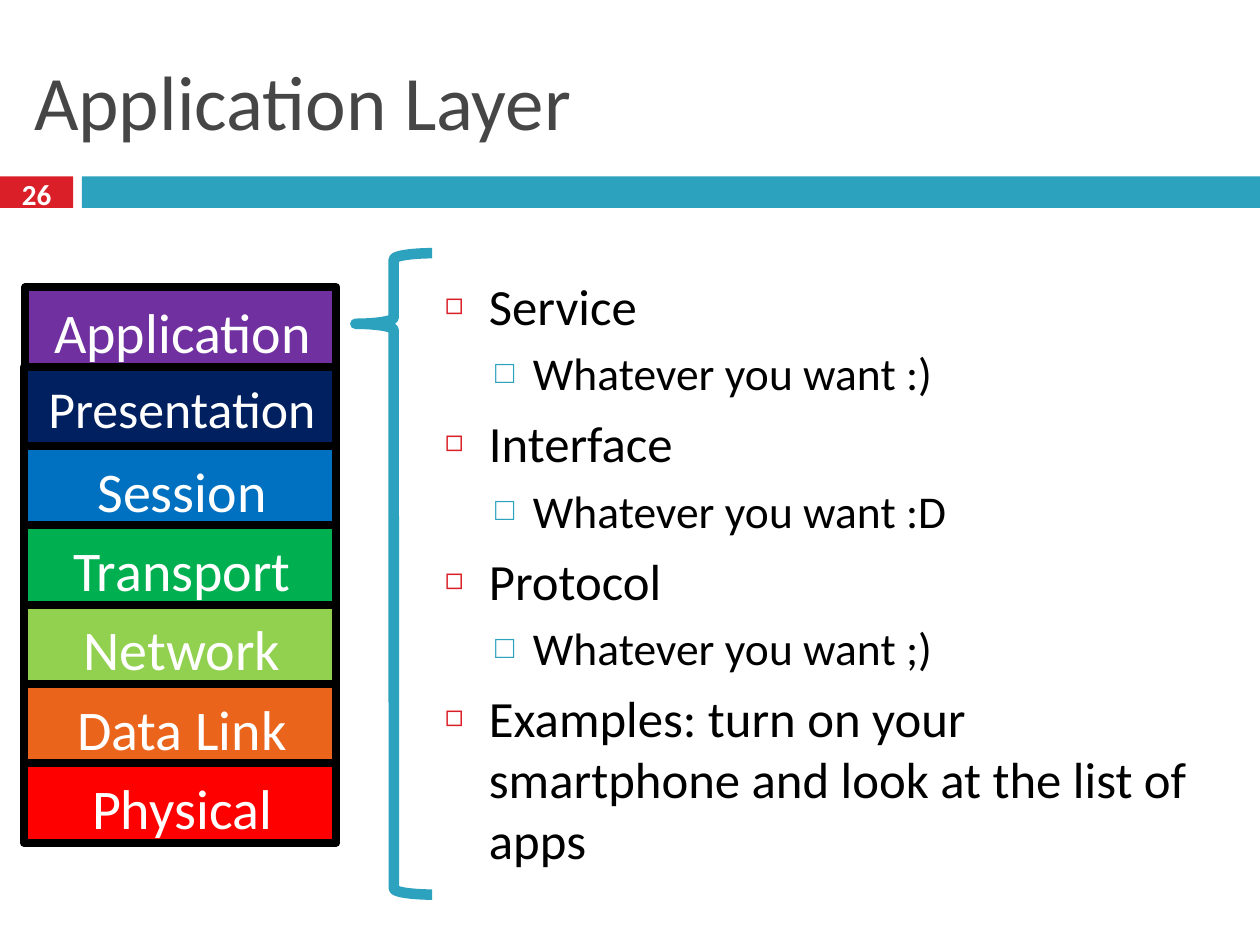
"""Build the Application Layer slide with its protocol stack and notes."""
from lxml.etree import SubElement
from pptx import Presentation
from pptx.dml.color import RGBColor
from pptx.enum.shapes import MSO_SHAPE as Shape
from pptx.enum.text import MSO_ANCHOR as Anchor, MSO_AUTO_SIZE as AutoSize, PP_ALIGN as Align
from pptx.oxml.ns import qn
from pptx.util import Inches, Pt

TITLE = "Application Layer"
PAGE = "26"
NOTES = [
    (0, "Service"),
    (1, "Whatever you want :)"),
    (0, "Interface"),
    (1, "Whatever you want :D"),
    (0, "Protocol"),
    (1, "Whatever you want ;)"),
    (0, "Examples: turn on your smartphone and look at the list of apps"),
]
LAYERS = [
    ("Application", "7030A0"),
    ("Presentation", "002060"),
    ("Session", "0070C0"),
    ("Transport", "00B050"),
    ("Network", "92D050"),
    ("Data Link", "EB641B"),
    ("Physical", "FF0000"),
]
THEME = dict(font="Calibri", title="464646", text="000000", light="FFFFFF",
             red="DA1F28", teal="2DA2BF", title_size=44, page_size=16.6,
             layer_size=32, long_layer_size=29.6)
LEVELS = [
    dict(size=29, before=7, left=0.35, hang=0.35, mark="◻", color=THEME["red"], pct=60),
    dict(size=26, before=5.5, left=0.7, hang=0.3, mark="□", color=THEME["teal"], pct=70),
]
STACK_TOP, LAYER_H = 2.28, 0.63


def rgb(value):
    return RGBColor.from_string(value)


def place(sp, box):
    sp.left, sp.top, sp.width, sp.height = map(Inches, box)


def write(p, text, size, color=THEME["text"], bold=False, align=Align.LEFT):
    p.alignment = align
    r = p.add_run()
    r.text = text
    r.font.name, r.font.size, r.font.bold = THEME["font"], Pt(size), bold
    r.font.color.rgb = rgb(color)


def add_shape(s, kind, box, fill=None, line=None, width=0):
    sp = s.shapes.add_shape(kind, *map(Inches, box))
    sp.shadow.inherit = False
    if fill:
        sp.fill.solid()
        sp.fill.fore_color.rgb = rgb(fill)
    else:
        sp.fill.background()
    if line:
        sp.line.color.rgb = rgb(line)
        sp.line.width = Pt(width)
    else:
        sp.line.fill.background()
    return sp


def add_label(s, box, text, size, anchor=Anchor.TOP, margins=(0.1, 0.08), **fmt):
    tf = s.shapes.add_textbox(*map(Inches, box)).text_frame
    tf.word_wrap = True
    tf.vertical_anchor = anchor
    tf.margin_left = tf.margin_right = Inches(margins[0])
    tf.margin_top = tf.margin_bottom = Inches(margins[1])
    write(tf.paragraphs[0], text, size, THEME["light"], align=Align.CENTER, **fmt)
    return tf.paragraphs[0]


def set_bullet(p, level):
    p.space_before = Pt(level["before"])
    pPr = p._p.get_or_add_pPr()
    pPr.set("marL", str(Inches(level["left"])))
    pPr.set("indent", str(-Inches(level["hang"])))
    SubElement(SubElement(pPr, qn("a:buClr")), qn("a:srgbClr"), val=level["color"])
    SubElement(pPr, qn("a:buSzPct"), val=str(level["pct"] * 1000))
    SubElement(pPr, qn("a:buChar"), char=level["mark"])


def add_title(s):
    place(s.shapes.title, (0.17, 0.25, 9.67, 1.08))
    tf = s.shapes.title.text_frame
    tf.vertical_anchor = Anchor.MIDDLE
    write(tf.paragraphs[0], TITLE, THEME["title_size"], THEME["title"])


def add_notes(s):
    body = s.placeholders[1]
    place(body, (3.43, 1.75, 6.4, 5.58))
    tf = body.text_frame
    tf.auto_size = AutoSize.NONE
    tf.vertical_anchor = Anchor.MIDDLE
    for i, (depth, text) in enumerate(NOTES):
        p = tf.add_paragraph() if i else tf.paragraphs[0]
        p.level = depth
        write(p, text, LEVELS[depth]["size"])
        set_bullet(p, LEVELS[depth])


def add_stack(s):
    for i, (name, color) in enumerate(LAYERS):
        top = STACK_TOP + i * LAYER_H
        left = 0.19 if i else 0.2
        add_shape(s, Shape.RECTANGLE, (left, top, 2.67 - left, LAYER_H), color, THEME["text"], 4.5)
        size = THEME["long_layer_size" if len(name) > 11 else "layer_size"]
        p = add_label(s, (left - 0.03, top, 2.64 - left, LAYER_H), name, size)
        p._p.get_or_add_pPr().set("marL", str(Inches(0.12)))


def main():
    prs = Presentation()
    prs.slide_width, prs.slide_height = Inches(10), Inches(7.5)
    s = prs.slides.add_slide(prs.slide_layouts[1])
    add_shape(s, Shape.RECTANGLE, (0, 1.4, 0.58, 0.25), THEME["red"])
    add_shape(s, Shape.RECTANGLE, (0.65, 1.4, 9.35, 0.25), THEME["teal"])
    add_title(s)
    add_label(s, (0, 1.37, 0.58, 0.33), PAGE, THEME["page_size"],
              anchor=Anchor.MIDDLE, margins=(0, 0), bold=True)
    add_notes(s)
    add_stack(s)
    brace = add_shape(s, Shape.LEFT_BRACE, (2.82, 2.01, 0.61, 5.09), line=THEME["teal"], width=6)
    brace.adjustments[0], brace.adjustments[1] = 0.08, 0.11
    prs.save("out.pptx")


if __name__ == "__main__":
    main()
